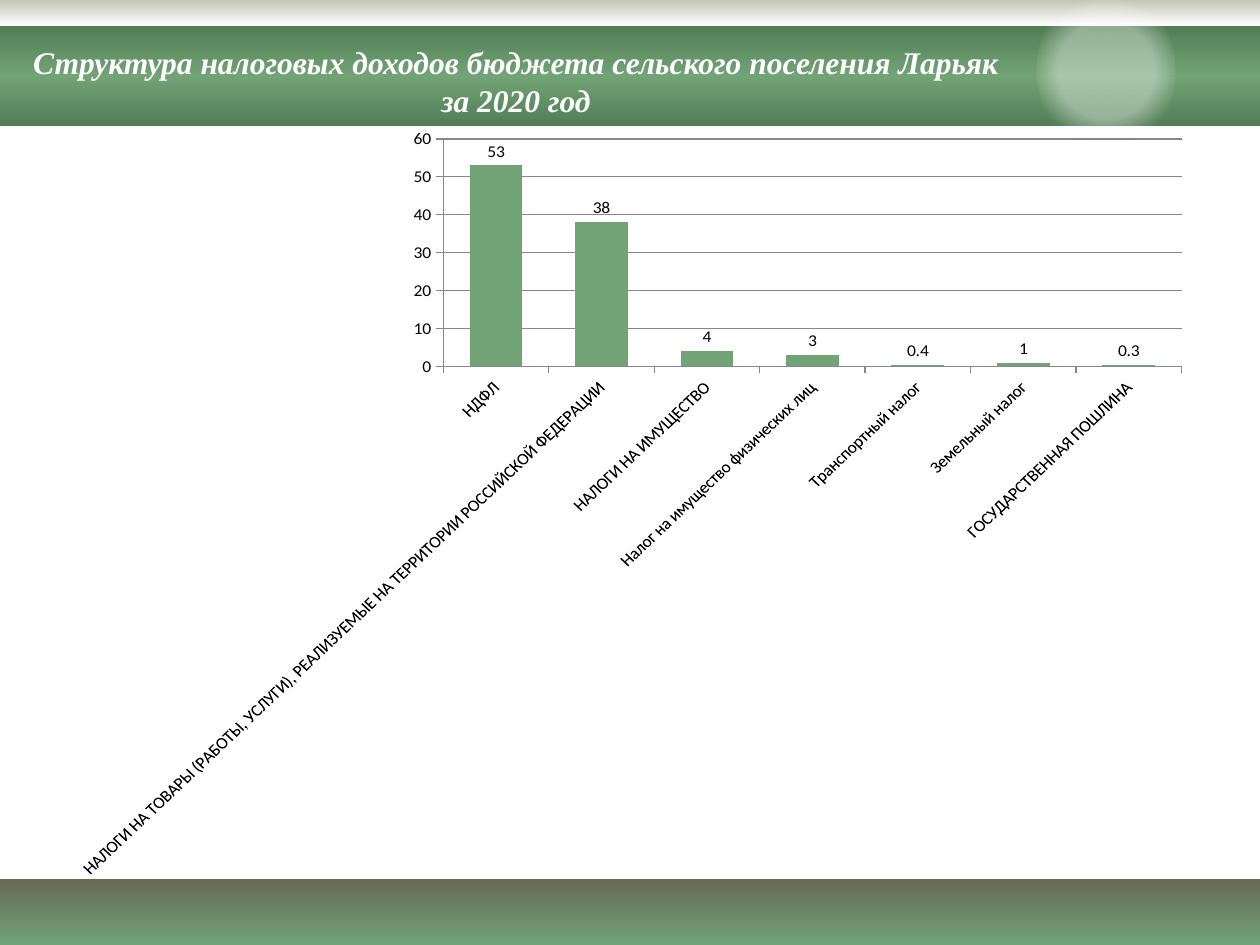
from lxml.etree import SubElement as Sub
from pptx import Presentation
from pptx.chart.data import CategoryChartData as Data
from pptx.dml.color import RGBColor as Rgb
from pptx.enum.chart import XL_CHART_TYPE as Kind, XL_LABEL_POSITION as Pos, XL_TICK_MARK as Tick
from pptx.enum.shapes import MSO_SHAPE as Form
from pptx.enum.text import MSO_AUTO_SIZE as Fit, PP_ALIGN as Align
from pptx.oxml.ns import qn
from pptx.util import Inches, Pt

WHITE = Rgb(0xFF, 0xFF, 0xFF)
BLACK = Rgb(0, 0, 0)
GREEN = Rgb(0x72, 0xA3, 0x76)
DARK = Rgb(0x52, 0x7E, 0x56)
OLIVE = Rgb(0x67, 0x6A, 0x55)
SAND = Rgb(0xC4, 0xC6, 0xB8)
GRAY = Rgb(0x87, 0x87, 0x87)
WIDE, HIGH = Inches(10), Inches(7.5)

TITLE = "Структура налоговых доходов бюджета сельского поселения Ларьяк за 2020 год"
TAXES = {
    "НДФЛ": 53,
    "НАЛОГИ НА ТОВАРЫ (РАБОТЫ, УСЛУГИ), РЕАЛИЗУЕМЫЕ НА ТЕРРИТОРИИ РОССИЙСКОЙ ФЕДЕРАЦИИ": 38,
    "НАЛОГИ НА ИМУЩЕСТВО": 4,
    "Налог на имущество физических лиц": 3,
    "Транспортный налог": 0.4,
    "Земельный налог": 1,
    "ГОСУДАРСТВЕННАЯ ПОШЛИНА": 0.3,
}


def area(left, top, wide, high):
    """Turn shares of the slide into a box in length units."""
    return int(left * WIDE), int(top * HIGH), int(wide * WIDE), int(high * HIGH)


def part(box, left, top, wide, high):
    """Return a part of a box, given as shares of that box."""
    x, y, w, h = box
    return int(x + left * w), int(y + top * h), int(wide * w), int(high * h)


def shade(slide, form, box, stops, round_=False):
    """Add a shape with a gradient of (place, colour, opacity) stops."""
    shape = slide.shapes.add_shape(form, *box)
    shape.shadow.inherit = False
    shape.line.fill.background()
    shape.fill.gradient()
    grad = shape.fill._xPr.find(qn("a:gradFill"))
    for child in list(grad):
        grad.remove(child)
    items = Sub(grad, qn("a:gsLst"))
    for place, tone, alpha in stops:
        stop = Sub(items, qn("a:gs"), pos=str(place * 1000))
        color = Sub(stop, qn("a:srgbClr"), val=str(tone))
        if alpha < 100:
            Sub(color, qn("a:alpha"), val=str(alpha * 1000))
    if round_:
        way = Sub(grad, qn("a:path"), path="circle")
        Sub(way, qn("a:fillToRect"), **dict.fromkeys("ltrb", "50000"))
    else:
        Sub(grad, qn("a:lin"), ang="5400000", scaled="0")


def foot(slide, box):
    """Draw the bottom band."""
    shade(slide, Form.RECTANGLE, box, [(0, OLIVE, 100), (100, GREEN, 100)])


def head(slide, box):
    """Draw the top bands, the glow and the title."""
    shade(slide, Form.RECTANGLE, part(box, 0, 0, 1, 0.21),
          [(0, SAND, 100), (100, WHITE, 100)])
    shade(slide, Form.RECTANGLE, part(box, 0, 0.21, 1, 0.79),
          [(0, DARK, 100), (50, GREEN, 100), (100, DARK, 100)])
    shade(slide, Form.OVAL, part(box, 0.823, -0.11, 0.11, 1.34),
          [(44, WHITE, 38), (67, WHITE, 0)], True)
    frame = slide.shapes.add_textbox(*part(box, 0.012, 0.29, 0.795, 1.01)).text_frame
    frame.word_wrap = True
    frame.auto_size = Fit.NONE
    para = frame.paragraphs[0]
    para.alignment = Align.CENTER
    run = para.add_run()
    run.text = TITLE
    font = run.font
    font.name, font.size = "Times New Roman", Pt(18)
    font.bold = font.italic = True
    font.color.rgb = WHITE


def graph(slide, box):
    """Draw the column chart of tax shares."""
    data = Data()
    data.categories = list(TAXES)
    data.add_series("Series 1", list(TAXES.values()))
    chart = slide.shapes.add_chart(Kind.COLUMN_CLUSTERED, *box, data).chart
    chart.has_legend = chart.has_title = False
    chart.font.name, chart.font.size = "Calibri", Pt(10)
    chart.font.color.rgb = BLACK
    plot = chart.plots[0]
    plot.gap_width = 100
    plot.vary_by_categories = False
    fill = plot.series[0].format.fill
    fill.solid()
    fill.fore_color.rgb = GREEN
    plot.has_data_labels = True
    plot.data_labels.show_value = True
    plot.data_labels.position = Pos.OUTSIDE_END
    cats, vals = chart.category_axis, chart.value_axis
    for axis in (cats, vals):
        axis.major_tick_mark, axis.minor_tick_mark = Tick.OUTSIDE, Tick.NONE
        axis.format.line.color.rgb = GRAY
        axis.tick_labels.font.size = Pt(10)
    vals.major_gridlines.format.line.color.rgb = GRAY
    vals.minimum_scale, vals.maximum_scale, vals.major_unit = 0, 60, 10
    body = cats._element.find(qn("c:txPr")).find(qn("a:bodyPr"))
    body.set("rot", "-2700000")
    body.set("vert", "horz")


def main():
    """Build and save the slide."""
    deck = Presentation()
    deck.slide_width, deck.slide_height = WIDE, HIGH
    slide = deck.slides.add_slide(deck.slide_layouts[6])
    foot(slide, area(0, 0.93, 1, 0.07))
    head(slide, area(0, 0, 1, 0.1333))
    graph(slide, area(0.043, 0.132, 0.913, 0.797))
    deck.save("out.pptx")


if __name__ == "__main__":
    main()
